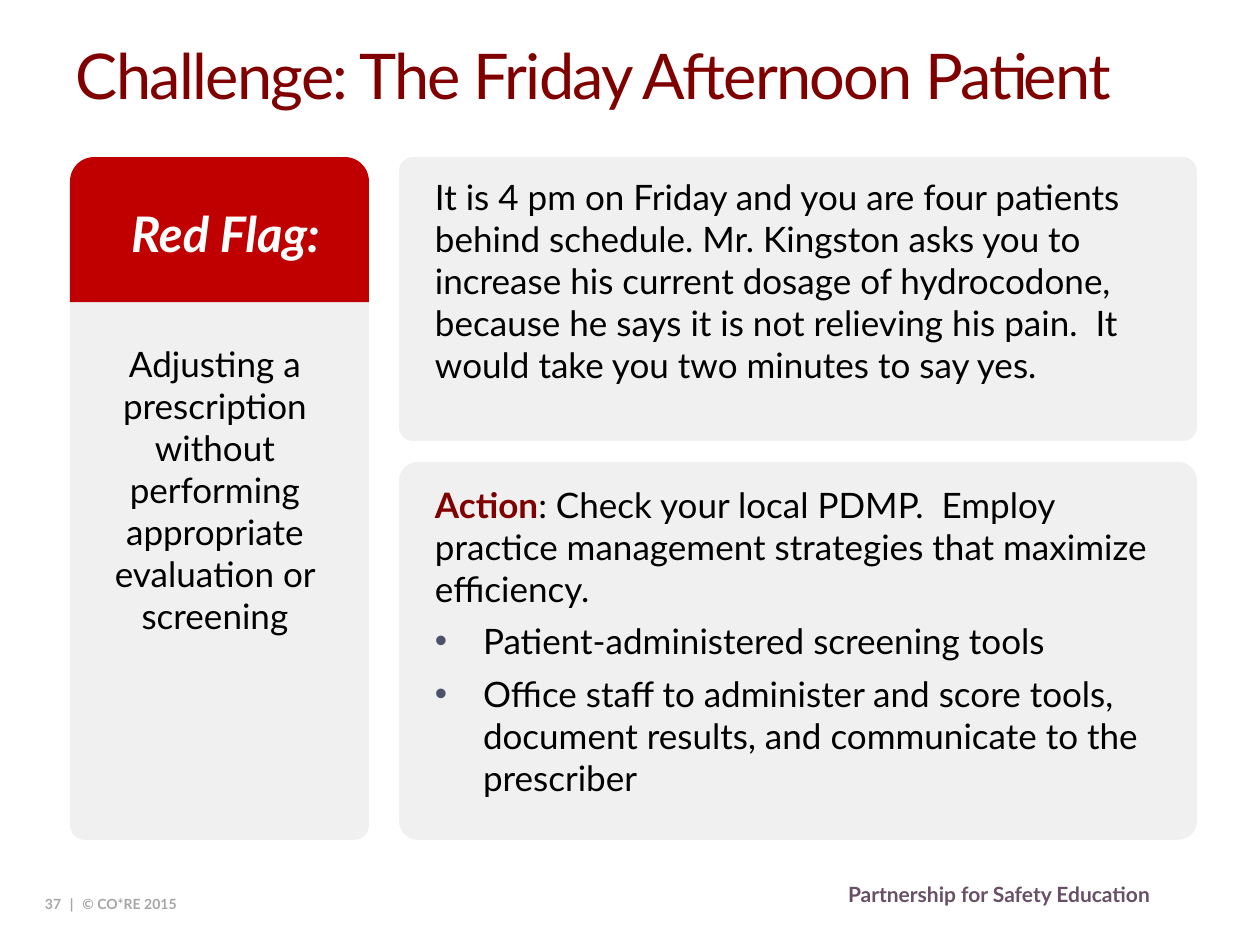
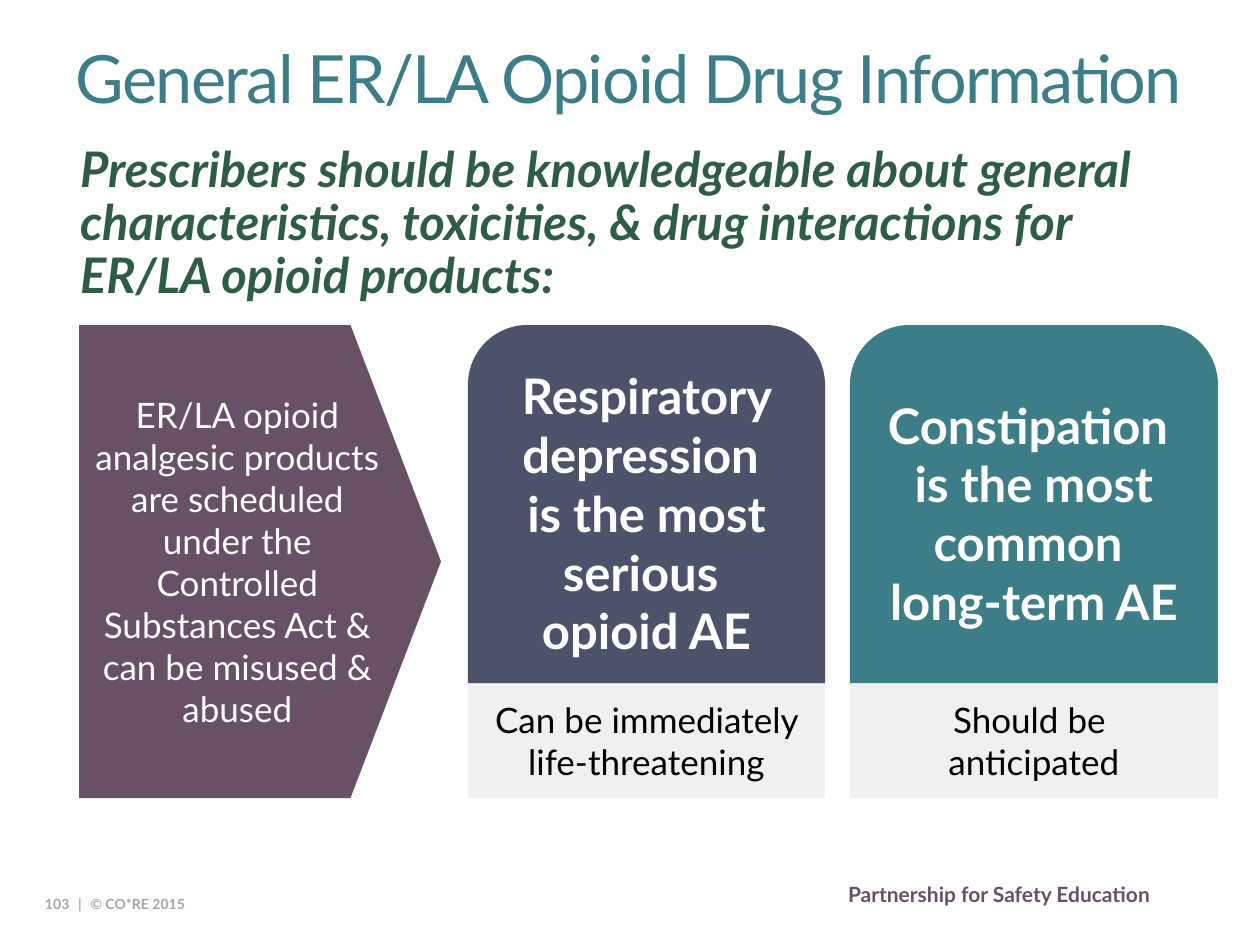
"""Build two opioid prescribing slides: a patient challenge and general drug facts."""
from lxml import etree
from pptx import Presentation
from pptx.dml.color import RGBColor
from pptx.enum.shapes import MSO_SHAPE
from pptx.enum.text import MSO_ANCHOR, PP_ALIGN
from pptx.oxml.ns import qn
from pptx.util import Emu, Pt

ROUNDED = MSO_SHAPE.ROUNDED_RECTANGLE
ROUND_TOP = MSO_SHAPE.ROUND_2_SAME_RECTANGLE
RECTANGLE = MSO_SHAPE.RECTANGLE
PENTAGON = MSO_SHAPE.PENTAGON
TOP, MIDDLE = MSO_ANCHOR.TOP, MSO_ANCHOR.MIDDLE
LEFT, CENTER = PP_ALIGN.LEFT, PP_ALIGN.CENTER

FONT = "Lato"
BLACK = RGBColor(0x00, 0x00, 0x00)
WHITE = RGBColor(0xFF, 0xFF, 0xFF)
PANEL = RGBColor(0xF0, 0xF0, 0xF0)
GRAY = RGBColor(0xA6, 0xA6, 0xA6)
MAROON = RGBColor(0x80, 0x00, 0x00)
RED = RGBColor(0xC0, 0x00, 0x00)
PLUM = RGBColor(0x68, 0x50, 0x66)
SLATE = RGBColor(0x4B, 0x52, 0x69)
TEAL = RGBColor(0x3C, 0x7D, 0x88)
GREEN = RGBColor(0x2E, 0x5C, 0x45)

PX = 914400 / 126
SLIDE_WIDTH, SLIDE_HEIGHT = 1260, 945
TITLE_BOX = (63, 31, 1155, 136)
PANEL_CORNER = 0.05
INSETS = (13, 6, 13, 6)

FOOTER = "Partnership for Safety Education"
COPYRIGHT = "© CO*RE 2015"

CHALLENGE = {
    "number": 37,
    "title": "Challenge: The Friday Afternoon Patient",
    "flag": "Red Flag:",
    "risk": "Adjusting a prescription without performing appropriate "
            "evaluation or screening",
    "story": "It is 4 pm on Friday and you are four patients behind schedule. "
             "Mr. Kingston asks you to increase his current dosage of hydrocodone, "
             "because he says it is not relieving his pain.  "
             "It would take you two minutes to say yes.",
    "action_label": "Action",
    "action": ": Check your local PDMP.  Employ practice management strategies "
              "that maximize efficiency.",
    "steps": [
        "Patient-administered screening tools",
        "Office staff to administer and score tools, document results, "
        "and communicate to the prescriber",
    ],
}

DRUG_INFORMATION = {
    "number": 103,
    "title": "General ER/LA Opioid Drug Information",
    "lead": "Prescribers should be knowledgeable about general characteristics, "
            "toxicities, & drug interactions for ER/LA opioid products:",
    "schedule": "ER/LA opioid analgesic products are scheduled under the "
                "Controlled Substances Act & can be misused & abused",
    "effects": [
        (468, 357, SLATE, "Respiratory depression \vis the most serious \vopioid AE",
         "Can be immediately life-threatening"),
        (850, 368, TEAL, "Constipation \vis the most common \vlong-term AE",
         "Should be \vanticipated"),
    ],
}


def px(value):
    return Emu(round(value * PX))


def style(run, size, color, bold=False, italic=False, spacing=0):
    font = run.font
    font.name, font.size = FONT, Pt(size)
    font.bold, font.italic = bold, italic
    font.color.rgb = color
    if spacing:
        run._r.get_or_add_rPr().set("spc", str(round(spacing * 100)))


def add_run(paragraph, text, *args, **look):
    run = paragraph.add_run()
    run.text = text
    style(run, *args, **look)


def write(shape, text, size, color, align=LEFT, anchor=TOP, insets=INSETS, **look):
    frame = shape.text_frame
    frame.word_wrap = True
    frame.vertical_anchor = anchor
    (frame.margin_left, frame.margin_top,
     frame.margin_right, frame.margin_bottom) = map(px, insets)
    frame.text = text
    paragraph = frame.paragraphs[0]
    paragraph.alignment = align
    for run in paragraph.runs:
        style(run, size, color, **look)
    return paragraph


def add_text(slide, box, *args, **look):
    textbox = slide.shapes.add_textbox(*map(px, box))
    return textbox, write(textbox, *args, **look)


def add_block(slide, kind, box, fill, corner=None):
    shape = slide.shapes.add_shape(kind, *map(px, box))
    shape.shadow.inherit = False
    shape.fill.solid()
    shape.fill.fore_color.rgb = fill
    shape.line.fill.background()
    if corner is not None:
        shape.adjustments[0] = corner
    return shape


def add_bullet(frame, text, size, color, bullet_color, indent):
    paragraph = frame.add_paragraph()
    properties = paragraph._p.get_or_add_pPr()
    properties.set("marL", str(px(indent)))
    properties.set("indent", str(-px(indent)))
    paragraph.space_before = Pt(6)
    bullet_fill = etree.SubElement(properties, qn("a:buClr"))
    etree.SubElement(bullet_fill, qn("a:srgbClr"), val=str(bullet_color))
    etree.SubElement(properties, qn("a:buFont"), typeface="Arial")
    etree.SubElement(properties, qn("a:buChar"), char="•")
    add_run(paragraph, text, size, color)


def start_slide(presentation, content, title_color, title_size):
    slide = presentation.slides.add_slide(presentation.slide_layouts[6])
    add_text(slide, (835, 876, 362, 38), FOOTER, 12, PLUM, bold=True)
    add_text(slide, TITLE_BOX, content["title"], title_size, title_color, spacing=-1)
    _, paragraph = add_text(slide, (32, 887, 220, 33), str(content["number"]),
                            8, GRAY, anchor=MIDDLE, bold=True)
    for text, spacing in ((" ", 3), ("| ", 1.5), (COPYRIGHT, 0)):
        add_run(paragraph, text, 8, GRAY, bold=True, spacing=spacing)
    return slide


def build_challenge(presentation, content):
    slide = start_slide(presentation, content, MAROON, 36)
    flag_left, flag_width = 70, 299
    case_left, case_width = 399, 798
    top, bottom, action_top = 157, 840, 462

    add_block(slide, ROUNDED, (flag_left, 287, flag_width, bottom - 287),
              PANEL, PANEL_CORNER)
    flag = add_block(slide, ROUND_TOP, (flag_left, top, flag_width, 145), RED)
    write(flag, content["flag"], 28, WHITE, CENTER, MIDDLE, (25, 6, 13, 6),
          bold=True, italic=True)
    add_text(slide, (84, 336, 262, 310), content["risk"], 20, BLACK, CENTER)

    add_block(slide, ROUNDED, (case_left, top, case_width, 284), PANEL, PANEL_CORNER)
    add_text(slide, (case_left + 23, 169, case_width - 46, 258),
             content["story"], 20, BLACK)

    add_block(slide, ROUNDED, (case_left, action_top, case_width, bottom - action_top),
              PANEL, PANEL_CORNER)
    textbox, paragraph = add_text(slide, (case_left + 23, 477, case_width - 46, 344),
                                  content["action_label"], 20, MAROON, bold=True)
    add_run(paragraph, content["action"], 20, BLACK)
    for step in content["steps"]:
        add_bullet(textbox.text_frame, step, 20, BLACK, SLATE, 48)


def build_drug_information(presentation, content):
    slide = start_slide(presentation, content, TEAL, 38)
    _, lead = add_text(slide, (67, 139, 1130, 97), content["lead"], 28, GREEN,
                       bold=True, italic=True)
    lead.line_spacing = 0.9

    top, split, bottom = 325, 683, 798
    for left, width, color, effect, note in content["effects"]:
        note_block = add_block(slide, RECTANGLE, (left, split, width, bottom - split), PANEL)
        write(note_block, note, 20, BLACK, CENTER, MIDDLE, (0, 0, 0, 0)).space_after = Pt(5)
        effect_block = add_block(slide, ROUND_TOP, (left, top, width, split - top), color)
        write(effect_block, effect, 28, WHITE, CENTER, MIDDLE, bold=True)

    schedule = add_block(slide, PENTAGON, (79, top, 362, bottom - top), PLUM, 0.25)
    write(schedule, content["schedule"], 20, WHITE, CENTER, MIDDLE)


def main():
    presentation = Presentation()
    presentation.slide_width = px(SLIDE_WIDTH)
    presentation.slide_height = px(SLIDE_HEIGHT)
    build_challenge(presentation, CHALLENGE)
    build_drug_information(presentation, DRUG_INFORMATION)
    presentation.save("out.pptx")


if __name__ == "__main__":
    main()
